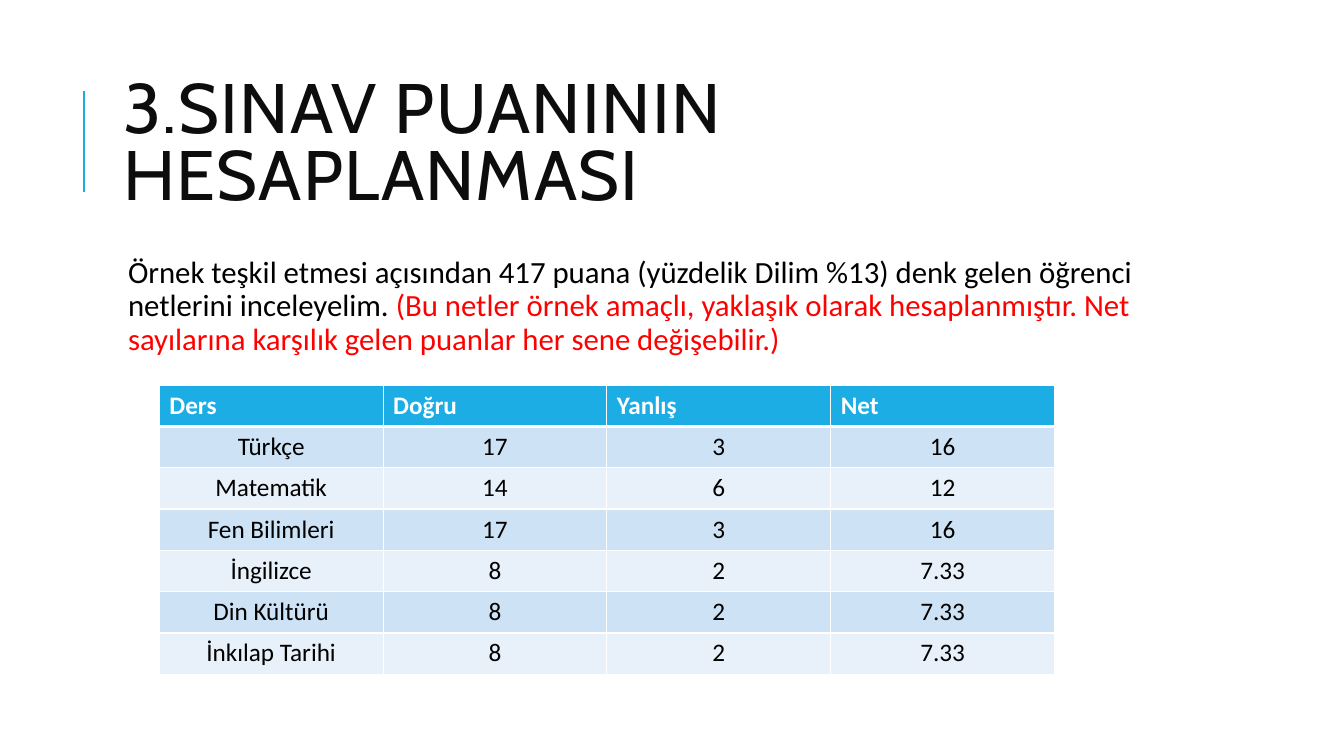
from dataclasses import dataclass

import lxml.etree
import pptx
import pptx.dml.color
import pptx.enum.shapes
import pptx.enum.text
import pptx.oxml.ns
import pptx.util

Inches = pptx.util.Inches
Pt = pptx.util.Pt
qn = pptx.oxml.ns.qn
Align = pptx.enum.text.PP_ALIGN

ACCENT = "1CADE4"
WHITE = "FFFFFF"
BLACK = "000000"
BANDS = ("CDE3F5", "E8F1FA")
COLUMN_WIDTH = 2.22
ROW_HEIGHT = 0.41


@dataclass(frozen=True)
class Lesson:
    name: str
    correct: str
    wrong: str
    net: str


@dataclass(frozen=True)
class Span:
    text: str
    color: str


@dataclass(frozen=True)
class CellStyle:
    fill: str
    color: str
    bold: bool
    align: Align
    bottom_border: float


HEADINGS = ("Ders", "Doğru", "Yanlış", "Net")
LESSONS = (
    Lesson("Türkçe", "17", "3", "16"),
    Lesson("Matematik", "14", "6", "12"),
    Lesson("Fen Bilimleri", "17", "3", "16"),
    Lesson("İngilizce", "8", "2", "7.33"),
    Lesson("Din Kültürü", "8", "2", "7.33"),
    Lesson("İnkılap Tarihi", "8", "2", "7.33"),
)
INTRODUCTION = (
    Span("Örnek teşkil etmesi açısından 417 puana (yüzdelik Dilim %13) denk gelen "
         "öğrenci netlerini inceleyelim. ", BLACK),
    Span("(Bu netler örnek amaçlı, yaklaşık olarak hesaplanmıştır. Net sayılarına "
         "karşılık gelen puanlar her sene değişebilir.)", "FF0000"),
)
HEADER_STYLE = CellStyle(ACCENT, WHITE, True, Align.LEFT, 3)
BAND_STYLES = [CellStyle(band, BLACK, False, Align.CENTER, 1) for band in BANDS]


def rgb(color: str) -> pptx.dml.color.RGBColor:
    return pptx.dml.color.RGBColor.from_string(color)


def place(box, left: float, top: float, width: float, height: float) -> None:
    box.left, box.top = Inches(left), Inches(top)
    box.width, box.height = Inches(width), Inches(height)


def add_color(parent, tag: str, color: str) -> None:
    holder = lxml.etree.SubElement(parent, qn(tag))
    lxml.etree.SubElement(holder, qn("a:srgbClr"), val=color)


def draw_accent_line(page) -> None:
    line = page.shapes.add_connector(
        pptx.enum.shapes.MSO_CONNECTOR.STRAIGHT,
        Inches(0.83), Inches(1.9), Inches(0.83), Inches(0.9))
    line.line.color.rgb = rgb(ACCENT)
    line.line.width = Pt(1.5)
    lxml.etree.SubElement(line._element.spPr, qn("a:effectLst"))


def write_title(box) -> None:
    place(box, 1.12, 0.64, 10.63, 1.64)
    frame = box.text_frame
    frame.text = "3.SINAV PUANININ HESAPLANMASI"
    frame.auto_size = pptx.enum.text.MSO_AUTO_SIZE.NONE
    frame.vertical_anchor = pptx.enum.text.MSO_ANCHOR.MIDDLE
    para = frame.paragraphs[0]
    para.alignment = Align.LEFT
    para.line_spacing = 0.8
    para.font.name = "Cabin"
    para.font.size = Pt(50)
    para.font.color.rgb = rgb("0D0D0D")
    para.font._element.set("spc", "100")


def write_introduction(box) -> None:
    place(box, 1.12, 2.5, 10.63, 4.4)
    frame = box.text_frame
    frame.auto_size = pptx.enum.text.MSO_AUTO_SIZE.NONE
    frame.margin_left = frame.margin_right = Inches(0.05)
    frame.margin_top = frame.margin_bottom = Inches(0.05)
    para = frame.paragraphs[0]
    para.line_spacing = 0.9
    para.space_before = Pt(12)
    para.space_after = Pt(2)
    properties = para._p.get_or_add_pPr()
    properties.set("marL", str(Inches(0.1)))
    properties.set("indent", str(Inches(-0.1)))
    add_color(properties, "a:buClr", ACCENT)
    lxml.etree.SubElement(properties, qn("a:buChar"), char=" ")
    para.font.name = "Calibri"
    para.font.size = Pt(22)
    for span in INTRODUCTION:
        run = para.add_run()
        run.text = span.text
        run.font.color.rgb = rgb(span.color)


def write_cell(cell, text: str, style: CellStyle) -> None:
    properties = cell._tc.get_or_add_tcPr()
    borders = {"a:lnL": 1, "a:lnR": 1, "a:lnT": 1, "a:lnB": style.bottom_border}
    for tag, width in borders.items():
        border = lxml.etree.SubElement(properties, qn(tag), w=str(Pt(width)))
        add_color(border, "a:solidFill", WHITE)
    cell.fill.solid()
    cell.fill.fore_color.rgb = rgb(style.fill)
    cell.text = text
    para = cell.text_frame.paragraphs[0]
    para.alignment = style.align
    para.font.name = "Calibri"
    para.font.size = Pt(18)
    para.font.bold = style.bold
    para.font.color.rgb = rgb(style.color)


def draw_net_table(page) -> None:
    rows = [HEADINGS] + [(item.name, item.correct, item.wrong, item.net) for item in LESSONS]
    table = page.shapes.add_table(
        len(rows), len(HEADINGS), Inches(1.58), Inches(3.82),
        Inches(COLUMN_WIDTH * len(HEADINGS)), Inches(ROW_HEIGHT * len(rows))).table
    for column in table.columns:
        column.width = Inches(COLUMN_WIDTH)
    for index, values in enumerate(rows):
        table.rows[index].height = Inches(ROW_HEIGHT)
        style = BAND_STYLES[(index - 1) % 2] if index else HEADER_STYLE
        for cell, value in zip(table.rows[index].cells, values):
            write_cell(cell, value, style)


def main() -> None:
    deck = pptx.Presentation()
    deck.slide_width, deck.slide_height = Inches(13.33), Inches(7.5)
    page = deck.slides.add_slide(deck.slide_layouts[1])
    draw_accent_line(page)
    write_title(page.shapes.title)
    write_introduction(page.placeholders[1])
    draw_net_table(page)
    deck.save("out.pptx")


if __name__ == "__main__":
    main()
